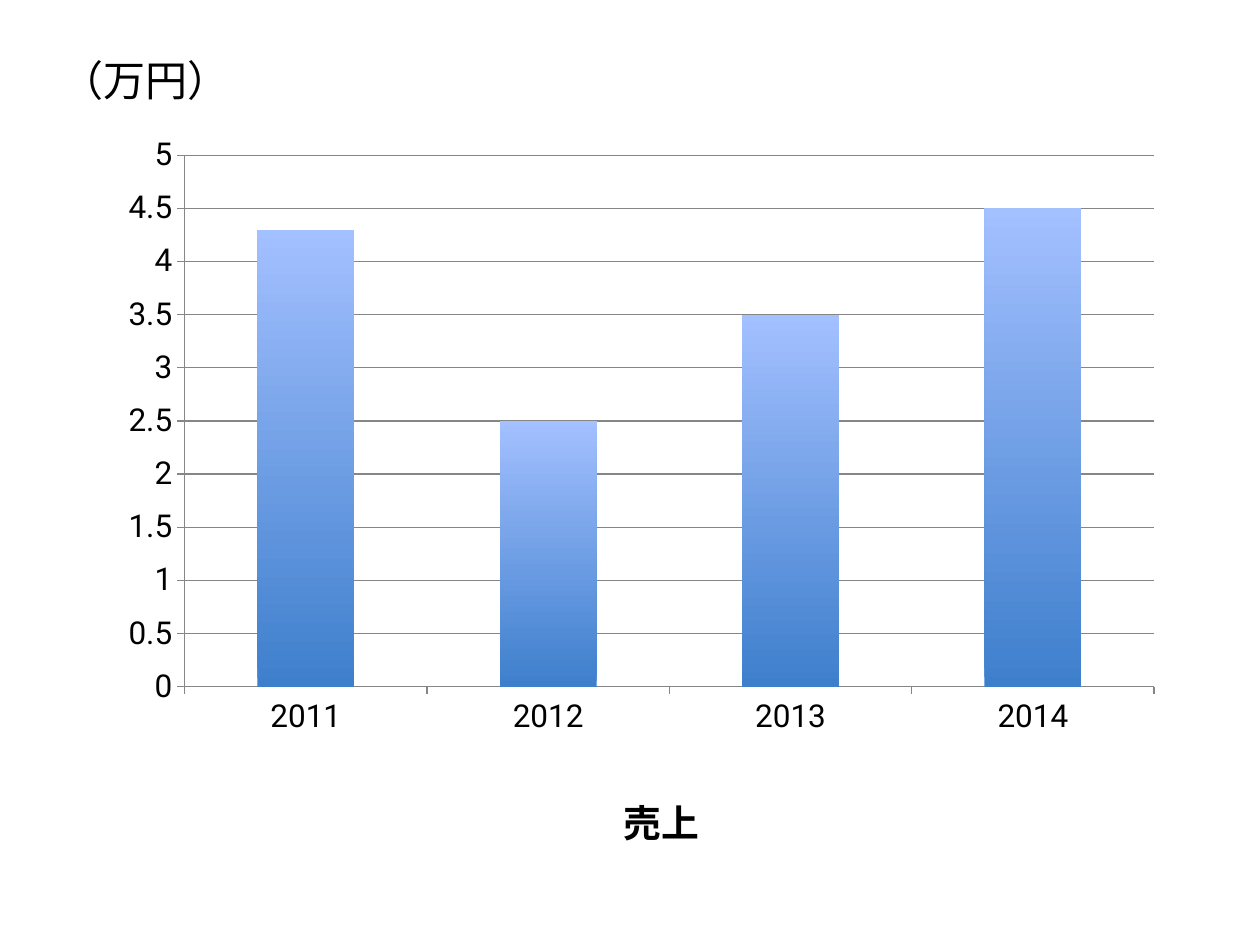
import pptx
import pptx.chart.data
import pptx.dml.color
import pptx.enum.chart
import pptx.oxml
import pptx.oxml.ns
import pptx.util
from pptx.util import Inches

FONT = "Roboto"
COLORS = {
    name: pptx.dml.color.RGBColor.from_string(value)
    for name, value in {
        "text": "000000",
        "line": "868686",
        "bar_bottom": "3E7FCC",
        "bar_top": "A3C0FF",
    }.items()
}


def set_font(font, size, bold=False):
    font.name = FONT
    font.size = pptx.util.Pt(size)
    font.bold = bold
    font.color.rgb = COLORS["text"]


def set_layout(parent, index, values):
    for layout in parent.findall(pptx.oxml.ns.qn("c:layout")):
        parent.remove(layout)
    settings = "".join(f'<c:{tag} val="{value}"/>' for tag, value in values.items())
    parent.insert(index, pptx.oxml.parse_xml(
        f'<c:layout {pptx.oxml.ns.nsdecls("c")}><c:manualLayout>{settings}'
        "</c:manualLayout></c:layout>"
    ))


presentation = pptx.Presentation()
presentation.slide_width = Inches(10)
presentation.slide_height = Inches(7.5)
slide = presentation.slides.add_slide(presentation.slide_layouts[6])

unit_label = slide.shapes.add_textbox(Inches(0.39), Inches(0.38), Inches(1.57), Inches(0.5))
unit_label.text_frame.word_wrap = True
paragraph = unit_label.text_frame.paragraphs[0]
paragraph.text = "（万円）"
set_font(paragraph.font, 24)

sales_data = pptx.chart.data.CategoryChartData()
sales_data.categories = ["2011", "2012", "2013", "2014"]
sales_data.add_series("売上", [4.3, 2.5, 3.5, 4.5])
chart = slide.shapes.add_chart(
    pptx.enum.chart.XL_CHART_TYPE.COLUMN_CLUSTERED,
    Inches(0.79), Inches(1.03), Inches(8.55), Inches(5.95), sales_data,
).chart
set_font(chart.font, 18)
chart.has_legend = False

chart.has_title = True
title_paragraph = chart.chart_title.text_frame.paragraphs[0]
title_paragraph.text = "売上"
set_font(title_paragraph.font, 21.6, bold=True)
set_layout(chart.chart_title._element, 1, {
    "xMode": "edge", "yMode": "edge", "x": 0.48, "y": 0.87,
})
set_layout(chart._chartSpace.chart.plotArea, 0, {
    "layoutTarget": "inner", "xMode": "edge", "yMode": "edge",
    "x": 0.079, "y": 0.034, "w": 0.9, "h": 0.709,
})

value_axis = chart.value_axis
value_axis.minimum_scale = 0
value_axis.maximum_scale = 5
value_axis.major_unit = 0.5
value_axis.has_major_gridlines = True
for axis in (chart.category_axis, value_axis):
    axis.major_tick_mark = pptx.enum.chart.XL_TICK_MARK.OUTSIDE
for line in (
    chart.category_axis.format.line,
    value_axis.format.line,
    value_axis.major_gridlines.format.line,
):
    line.color.rgb = COLORS["line"]
    line.width = pptx.util.Pt(0.75)

plot = chart.plots[0]
plot.gap_width = 150
plot.vary_by_categories = False
bar_fill = plot.series[0].format.fill
bar_fill.gradient()
bar_fill.gradient_angle = 90
for stop, name in zip(bar_fill.gradient_stops, ("bar_bottom", "bar_top")):
    stop.color.rgb = COLORS[name]

presentation.save("out.pptx")
